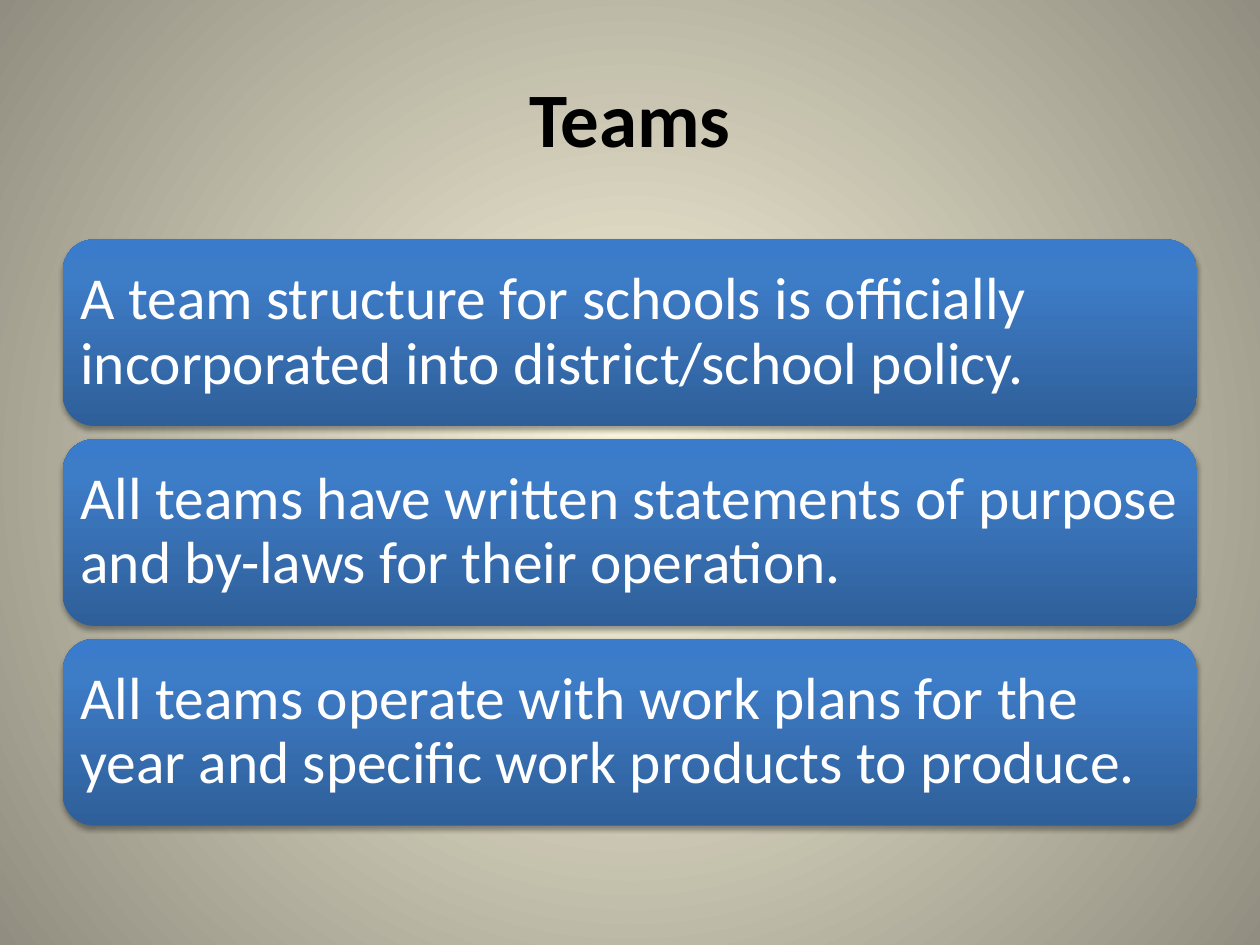
from lxml import etree
from pptx import Presentation
from pptx.dml.color import RGBColor
from pptx.enum.shapes import MSO_SHAPE
from pptx.enum.text import MSO_ANCHOR, PP_ALIGN
from pptx.oxml import parse_xml
from pptx.oxml.ns import nsdecls, qn
from pptx.util import Pt

ROUNDED = MSO_SHAPE.ROUNDED_RECTANGLE
MIDDLE = MSO_ANCHOR.MIDDLE
LEFT, CENTER = PP_ALIGN.LEFT, PP_ALIGN.CENTER

COLORS = {
    "cream": "FCF7DD",
    "taupe": "918E81",
    "navy": "2F5F99",
    "blue": "3D7CC7",
    "bright": "3A7CCB",
    "black": "000000",
    "white": "FFFFFF",
}
RADIAL = '<a:path path="circle"><a:fillToRect l="50000" t="50000" r="50000" b="50000"/></a:path>'
UPWARD = '<a:lin ang="16200000" scaled="0"/>'
STATEMENTS = [
    "A team structure for schools is officially incorporated into district/school policy.",
    "All teams have written statements of purpose and by-laws for their operation.",
    "All teams operate with work plans for the year and specific work products to produce.",
]


def write(sp, text, size, color, bold=False, align=LEFT, spacing=1.0, inset=7.2):
    tf = sp.text_frame
    tf.word_wrap = True
    tf.vertical_anchor = MIDDLE
    tf.margin_left = tf.margin_right = Pt(inset)
    tf.margin_top = tf.margin_bottom = Pt(inset)
    p = tf.paragraphs[0]
    p.alignment = align
    p.line_spacing = spacing
    r = p.add_run()
    r.text = text
    r.font.name = "Calibri"
    r.font.size = Pt(size)
    r.font.bold = bold
    r.font.color.rgb = RGBColor.from_string(COLORS[color])


class Deck:
    def __init__(self, width, height):
        self.prs = Presentation()
        self.prs.slide_width, self.prs.slide_height = Pt(width), Pt(height)
        self.s = self.prs.slides.add_slide(self.prs.slide_layouts[6])

    def gradient(self, fill, parent, stops, direction):
        fill.solid()
        marks = "".join(
            f'<a:gs pos="{pos * 1000}"><a:srgbClr val="{COLORS[name]}"/></a:gs>'
            for pos, name in stops
        )
        solid = next(parent.iter(qn("a:solidFill")))
        solid.getparent().replace(solid, parse_xml(
            f'<a:gradFill {nsdecls("a")} rotWithShape="1">'
            f"<a:gsLst>{marks}</a:gsLst>{direction}</a:gradFill>"
        ))

    def background(self, stops):
        self.gradient(self.s.background.fill, self.s.element, stops, RADIAL)

    def title(self, text, left, top, width, height):
        sp = self.s.shapes.add_textbox(Pt(left), Pt(top), Pt(width), Pt(height))
        write(sp, text, 44, "black", bold=True, align=CENTER)

    def shadow(self, sp):
        sp.shadow.inherit = False
        effects = sp.element.spPr.find(qn("a:effectLst"))
        outer = etree.SubElement(
            effects, qn("a:outerShdw"), blurRad=str(Pt(3.1)), dist=str(Pt(1.8)),
            dir="5400000", rotWithShape="0",
        )
        color = etree.SubElement(outer, qn("a:srgbClr"), val=COLORS["black"])
        etree.SubElement(color, qn("a:alpha"), val="35000")

    def card(self, text, left, top, width, height):
        sp = self.s.shapes.add_shape(ROUNDED, Pt(left), Pt(top), Pt(width), Pt(height))
        stops = [(0, "navy"), (80, "blue"), (100, "bright")]
        self.gradient(sp.fill, sp.element.spPr, stops, UPWARD)
        sp.line.fill.background()
        self.shadow(sp)
        write(sp, text, 34, "white", spacing=0.9, inset=4.8)


def main():
    deck = Deck(720, 540)
    deck.background([(0, "cream"), (100, "taupe")])
    left, width = 36, 648
    deck.title("Teams", left, 21.6, width, 90)
    top, height, gap = 136.8, 106.6, 7.6
    for i, text in enumerate(STATEMENTS):
        deck.card(text, left, top + i * (height + gap), width, height)
    deck.prs.save("out.pptx")


if __name__ == "__main__":
    main()
